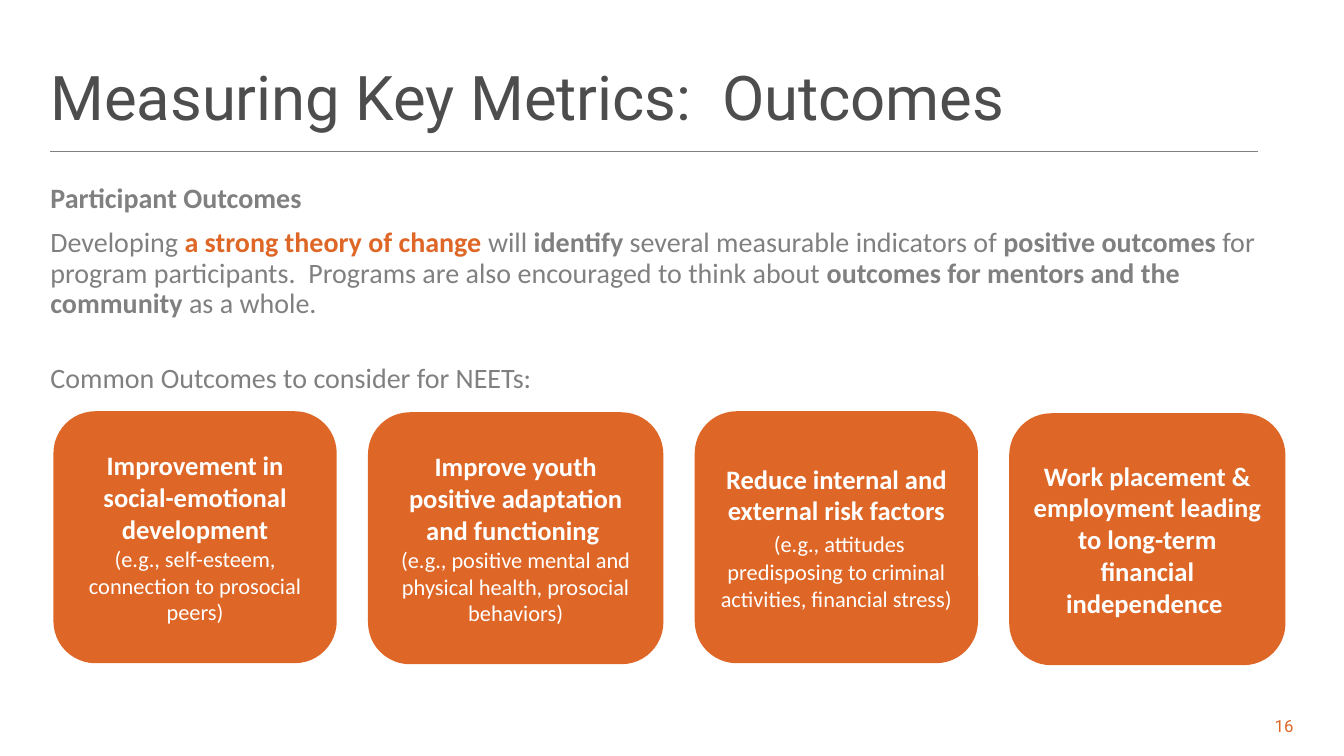
from pptx import Presentation
from pptx.dml.color import RGBColor
from pptx.enum.shapes import MSO_CONNECTOR as Connector, MSO_SHAPE as Shape
from pptx.enum.text import MSO_ANCHOR as Anchor, PP_ALIGN as Align
from pptx.oxml.ns import qn
from pptx.util import Inches, Pt
from lxml.etree import SubElement

# Content: each paragraph is a list of (text, style) spans
TITLE = "Measuring Key Metrics:  Outcomes"
PAGE_NUMBER = "16"
BODY = [
    [("Participant Outcomes", "strong")],
    [("Developing ", "plain"),
     ("a strong theory of change ", "accent"),
     ("will ", "plain"),
     ("identify", "strong"),
     (" several measurable indicators of ", "plain"),
     ("positive outcomes ", "strong"),
     ("for program participants.  Programs are also encouraged to think about ", "plain"),
     ("outcomes for mentors and the community", "strong"),
     (" as a whole.", "plain")],
    [("Common Outcomes to consider for NEETs:", "plain")],
]
# Card: width, top, paragraphs
CARDS = [
    (2.81, 4.08, [
        [("Improvement in social-emotional development", "heading")],
        [("(e.g., self-esteem, connection to prosocial peers)", "example")]]),
    (2.93, 4.09, [
        [("Improve youth positive adaptation and functioning ", "heading")],
        [("(e.g., positive mental and physical health, prosocial behaviors)", "example")]]),
    (2.81, 4.08, [
        [("Reduce internal and external risk factors", "heading")],
        [(" ", "spacer"),
         ("(e.g., attitudes predisposing to criminal activities, financial stress)", "example")]]),
    (2.74, 4.1, [
        [("Work placement & employment leading to long-term financial independence ", "heading")]]),
]

# Look
COLORS = {"title": "4D4D4D", "text": "808080", "orange": "DE6626", "white": "FFFFFF"}
STYLES = {  # font, size, colour, bold
    "title": ("Roboto", 44, "title", False),
    "number": ("Roboto", 12, "orange", False),
    "plain": ("Calibri", 20, "text", False),
    "strong": ("Calibri", 20, "text", True),
    "accent": ("Calibri", 20, "orange", True),
    "heading": ("Calibri", 19, "white", True),
    "spacer": ("Calibri", 19, "white", False),
    "example": ("Calibri", 16, "white", False),
}
WIDTH, HEIGHT, MARGIN = 13.33, 7.5, 0.5
CONTENT_WIDTH = WIDTH - 2 * MARGIN
CARD_LEFT, CARD_GAP, CARD_HEIGHT = 0.53, 0.31, HEIGHT / 3

deck = Presentation()
deck.slide_width, deck.slide_height = Inches(WIDTH), Inches(HEIGHT)
page = deck.slides.add_slide(deck.slide_layouts[6])


def color(name):
    return RGBColor.from_string(COLORS[name])


def write(frame, paragraphs, align=Align.LEFT, spacing=1.0, after=0):
    frame.word_wrap = True
    for index, spans in enumerate(paragraphs):
        para = frame.paragraphs[0] if index == 0 else frame.add_paragraph()
        para.alignment, para.line_spacing = align, spacing
        para.space_after = Pt(after)
        for text, style in spans:
            span = para.add_run()
            span.text = text
            span.font.name, size, shade, span.font.bold = STYLES[style]
            span.font.size = Pt(size)
            span.font.color.rgb = color(shade)


def add_text(left, top, width, height, paragraphs, anchor=Anchor.TOP, **layout):
    box = page.shapes.add_textbox(*map(Inches, (left, top, width, height)))
    frame = box.text_frame
    frame.margin_left = frame.margin_right = frame.margin_top = frame.margin_bottom = 0
    frame.vertical_anchor = anchor
    write(frame, paragraphs, **layout)
    return frame


# Title and rule
add_text(MARGIN, 0.62, CONTENT_WIDTH, 0.75, [[(TITLE, "title")]], Anchor.MIDDLE, spacing=0.9)
rule = page.shapes.add_connector(
    Connector.STRAIGHT, *map(Inches, (MARGIN, HEIGHT / 5, 12.48, HEIGHT / 5)))
rule.line.color.rgb = color("text")
rule.line.width = Pt(0.5)
SubElement(rule._element.spPr, qn("a:effectLst"))

# Body text, with one line of space above the lead-in to the cards
body = add_text(MARGIN, 1.83, CONTENT_WIDTH, 4.5, BODY, spacing=0.9, after=10)
body.paragraphs[-1].space_before = Pt(22)

# Outcome cards
left = CARD_LEFT
for width, top, paragraphs in CARDS:
    card = page.shapes.add_shape(
        Shape.ROUNDED_RECTANGLE, *map(Inches, (left, top, width, CARD_HEIGHT)))
    card.shadow.inherit = False
    card.fill.solid()
    card.fill.fore_color.rgb = color("orange")
    card.line.fill.background()
    card.text_frame.vertical_anchor = Anchor.MIDDLE
    write(card.text_frame, paragraphs, align=Align.CENTER)
    left += width + CARD_GAP

# Page number
add_text(12.42, 7.08, 0.41, 0.22, [[(PAGE_NUMBER, "number")]], Anchor.BOTTOM, align=Align.RIGHT)

deck.save("out.pptx")
